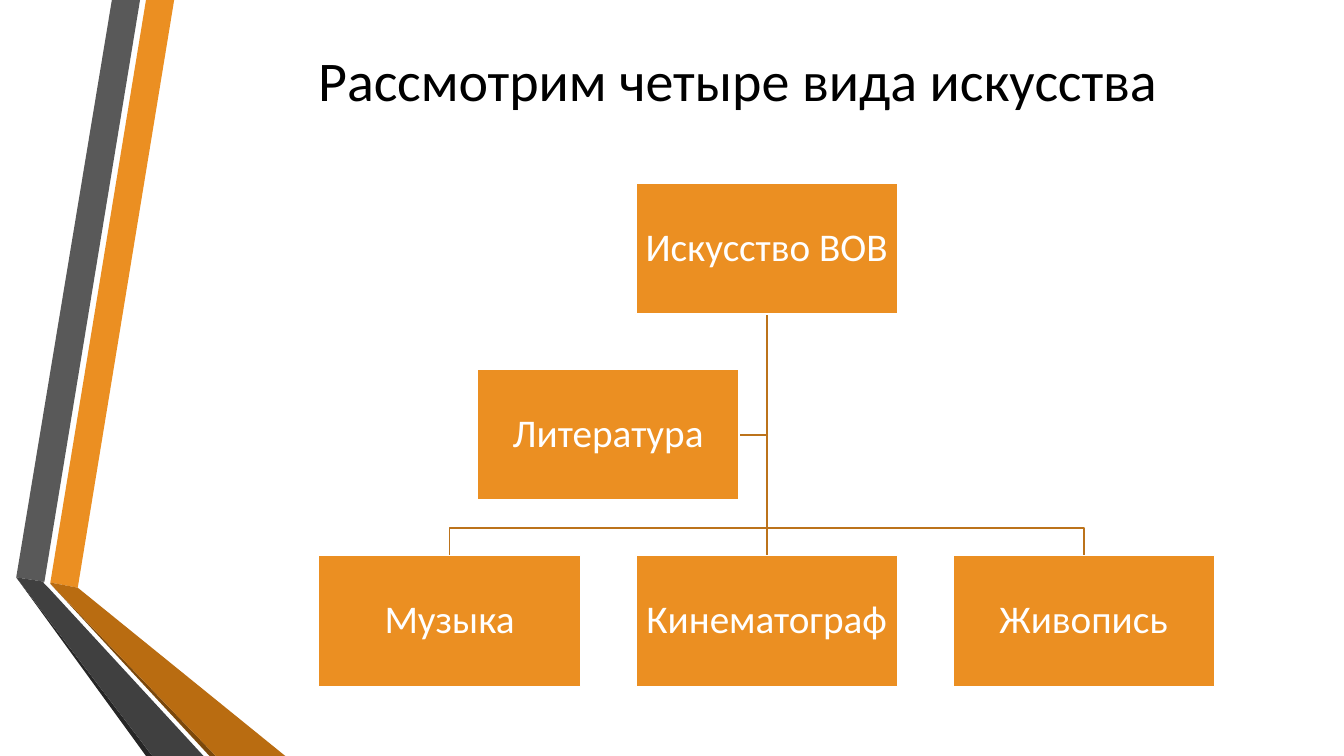
import pptx
import pptx.dml.color
import pptx.enum.shapes
import pptx.enum.text
import pptx.oxml
import pptx.oxml.ns
import pptx.util

Cm = pptx.util.Cm
Pt = pptx.util.Pt

COLORS = {
    "orange": "EB8F22", "brown": "B96C11", "dark_brown": "7B480B",
    "gray": "595959", "dark_gray": "404040", "near_black": "262626",
    "branch": "BC731B", "white": "FFFFFF", "black": "000000",
}

# Diagram grid, in centimetres
LEFT, TOP = 8.03, 4.62
COLUMN_STEP, ROW_STEP = 7.99, 4.69
BOX_WIDTH, BOX_HEIGHT = 6.6, 3.3

FOLD_GRAY, FOLD_ORANGE = (0.41, 14.55), (1.27, 14.71)
BOTTOM = 19.05
RIBBONS = [
    ("orange", [(1.27, 14.68), (1.96, 14.81), (4.39, 0), (3.68, 0)]),
    ("gray", [(3.53, 0), (2.82, 0), FOLD_GRAY, (1.12, 14.66)]),
    ("near_black", [FOLD_GRAY, (3.68, BOTTOM), (3.84, BOTTOM)]),
    ("dark_brown", [FOLD_ORANGE, (5.28, BOTTOM), (5.44, BOTTOM)]),
    ("brown", [FOLD_ORANGE, (5.44, BOTTOM), (7.19, BOTTOM),
               (1.96, 14.81), (1.27, 14.68)]),
    ("dark_gray", [(5.13, BOTTOM), (1.22, 14.81), (1.09, 14.68),
                   (1.12, 14.66), FOLD_GRAY, (3.84, BOTTOM)]),
]

# Label, column, row
ART_FORMS = [
    ("Искусство ВОВ", 1, 0),
    ("Музыка", 0, 2),
    ("Кинематограф", 1, 2),
    ("Живопись", 2, 2),
    ("Литература", 0.5, 1),
]


class SlideBuilder:
    font = "Calibri"
    line_width = Pt(1.25)

    def __init__(self, slide):
        self.slide = slide
        self.shapes = slide.shapes

    def color(self, name):
        return pptx.dml.color.RGBColor.from_string(COLORS[name])

    def outline(self, shape, color):
        shape.line.color.rgb = self.color(color)
        shape.line.width = self.line_width

    def set_text(self, shape, text, size, color):
        shape.text_frame.text = text
        shape.text_frame.word_wrap = True
        paragraph = shape.text_frame.paragraphs[0]
        font = paragraph.runs[0].font
        font.name, font.size = self.font, Pt(size)
        font.color.rgb = self.color(color)
        return paragraph

    def path_shape(self, points, closed):
        start, *rest = [(Cm(x), Cm(y)) for x, y in points]
        builder = self.shapes.build_freeform(*start)
        builder.add_line_segments(rest, close=closed)
        shape = builder.convert_to_shape()
        shape.shadow.inherit = False
        return shape

    def ribbon(self, color, points):
        shape = self.path_shape(points, True)
        shape.fill.solid()
        shape.fill.fore_color.rgb = self.color(color)
        shape.line.fill.background()

    def elbow(self, points):
        shape = self.path_shape(points, False)
        shape.fill.background()
        self.outline(shape, "branch")

    def straight(self, start, end):
        connector = self.shapes.add_connector(
            pptx.enum.shapes.MSO_CONNECTOR.STRAIGHT,
            *(Cm(value) for value in start + end))
        self.outline(connector, "branch")
        properties = connector._element.spPr
        properties.append(pptx.oxml.parse_xml(
            "<a:effectLst %s/>" % pptx.oxml.ns.nsdecls("a")))

    def box(self, label, column, row):
        shape = self.shapes.add_shape(
            pptx.enum.shapes.MSO_SHAPE.RECTANGLE,
            Cm(LEFT + column * COLUMN_STEP), Cm(TOP + row * ROW_STEP),
            Cm(BOX_WIDTH), Cm(BOX_HEIGHT))
        shape.shadow.inherit = False
        shape.fill.solid()
        shape.fill.fore_color.rgb = self.color("orange")
        self.outline(shape, "white")
        frame = shape.text_frame
        frame.margin_left = frame.margin_right = Cm(0.05)
        frame.margin_top = frame.margin_bottom = Cm(0.05)
        frame.vertical_anchor = pptx.enum.text.MSO_ANCHOR.MIDDLE
        paragraph = self.set_text(shape, label, 28, "white")
        paragraph.alignment = pptx.enum.text.PP_ALIGN.CENTER
        paragraph.line_spacing = 0.9

    def title(self, text):
        shape = self.shapes.add_textbox(Cm(7.77), Cm(1.02), Cm(23.95), Cm(1.96))
        self.set_text(shape, text, 40, "black")

    def branches(self):
        """Join the root box to the side box and to the bottom row."""
        trunk = LEFT + COLUMN_STEP + BOX_WIDTH / 2
        root_bottom = TOP + BOX_HEIGHT
        row_top = TOP + 2 * ROW_STEP
        bend = row_top - 0.69
        side_y = TOP + ROW_STEP + BOX_HEIGHT / 2
        side_right = LEFT + COLUMN_STEP / 2 + BOX_WIDTH
        self.elbow([(trunk, root_bottom), (trunk, side_y), (side_right, side_y)])
        for child in (trunk + COLUMN_STEP, trunk - COLUMN_STEP):
            self.elbow([(trunk, root_bottom), (trunk, bend),
                        (child, bend), (child, row_top)])
        self.straight((trunk, root_bottom), (trunk, row_top))


def main():
    presentation = pptx.Presentation()
    presentation.slide_width = Cm(33.87)
    presentation.slide_height = Cm(BOTTOM)
    builder = SlideBuilder(
        presentation.slides.add_slide(presentation.slide_layouts[6]))
    for color, points in RIBBONS:
        builder.ribbon(color, points)
    builder.branches()
    for label, column, row in ART_FORMS:
        builder.box(label, column, row)
    builder.title("Рассмотрим четыре вида искусства")
    presentation.save("out.pptx")


if __name__ == "__main__":
    main()
